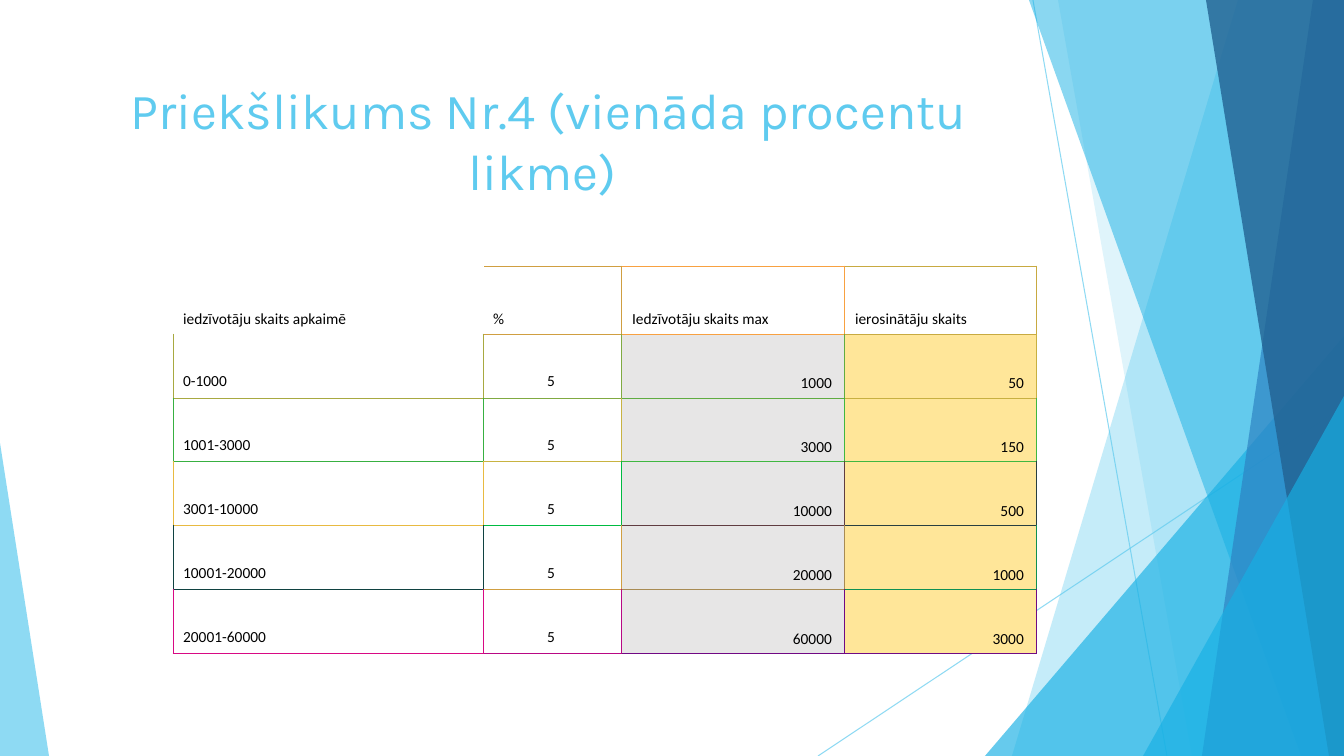
from lxml import etree
from pptx import Presentation
from pptx.dml.color import RGBColor
from pptx.enum.shapes import MSO_CONNECTOR, MSO_SHAPE
from pptx.enum.text import MSO_ANCHOR, PP_ALIGN
from pptx.oxml.ns import qn
from pptx.util import Emu, Pt

STRAIGHT = MSO_CONNECTOR.STRAIGHT
TRIANGLE = MSO_SHAPE.ISOSCELES_TRIANGLE
LEFT, MID, RIGHT = PP_ALIGN.LEFT, PP_ALIGN.CENTER, PP_ALIGN.RIGHT
CENTRE, BOTTOM = MSO_ANCHOR.MIDDLE, MSO_ANCHOR.BOTTOM

# Content
TITLE = "Priekšlikums Nr.4 (vienāda procentu likme) "
HEAD = ["iedzīvotāju skaits apkaimē", "%", "Iedzīvotāju skaits max", "ierosinātāju skaits"]
ROWS = [
    HEAD,
    ["0-1000", "5", "1000", "50"],
    ["1001-3000", "5", "3000", "150"],
    ["3001-10000", "5", "10000", "500"],
    ["10001-20000", "5", "20000", "1000"],
    ["20001-60000", "5", "60000", "3000"],
]
COLORS = {"sky": "5FCBEF", "cyan": "17B0E4", "blue": "2E83C3", "navy": "226292",
          "grey": "E7E6E6", "gold": "FFE699", "black": "000000"}
# Right and bottom edge of each cell
EDGES = [
    ["FFFFFF", "D09F41", "F8A141", "C8AA41"],
    ["A8A941", "80AA41", "60AC41", "C8B041"],
    ["38B041", "C8B341", "40B741", "40B741"],
    ["E8BA41", "00BB41", "603D41", "283F41"],
    ["104241", "D09F41", "A88B53", "109053"],
    ["D80984", "B80884", "700884", "700B84"],
]
# Column: width, alignment, anchor, fill
COLS = [(310, LEFT, CENTRE, None), (139, MID, CENTRE, None),
        (223, RIGHT, BOTTOM, "grey"), (192, RIGHT, BOTTOM, "gold")]
WIDE, HIGH = 1344, 756
TOP_ROW, ROW = 68, 64

# Background: lines by ends, bands by top and bottom x, wedges by box and tip
LINES = [(1033, 0, 1167, HIGH), (WIDE, 406, 818, HIGH)]
FACETS = [
    ("band", (1238, 1012), "sky", 36),
    ("band", (1058, 1192), "sky", 20),
    ("wedge", (985, 336, 359, 420, 1), "cyan", 66),
    ("band", (1029, 1301), "cyan", 50),
    ("band", (1313, 1202), "blue", 70),
    ("band", (1206, 1329), "navy", 80),
    ("wedge", (1143, 396, 201, 360, 1), "cyan", 66),
    ("wedge", (0, 443, 49, 313, 0), "sky", 70),
]

SCALE = 12192000 / WIDE


def px(n):
    return Emu(round(n * SCALE))


def rgb(name):
    return RGBColor.from_string(COLORS[name])


def fade(part, alpha):
    for tone in part.iter(qn("a:srgbClr")):
        etree.SubElement(tone, qn("a:alpha")).set("val", str(alpha * 1000))


def write(frame, text, font, size, color, align=LEFT):
    frame.word_wrap = True
    para = frame.paragraphs[0]
    para.alignment = align
    run = para.add_run()
    run.text = text
    run.font.name, run.font.size = font, Pt(size)
    run.font.color.rgb = rgb(color)


def edge(cell, sides):
    props = cell._tc.get_or_add_tcPr()
    for spot, (side, color) in enumerate(sides.items()):
        line = etree.Element(qn("a:ln" + side), w=str(Pt(0.75)))
        fill = etree.SubElement(line, qn("a:solidFill"))
        etree.SubElement(fill, qn("a:srgbClr"), val=color)
        props.insert(spot, line)


deck = Presentation()
deck.slide_width, deck.slide_height = px(WIDE), px(HIGH)
slide = deck.slides.add_slide(deck.slide_layouts[6])
shapes = slide.shapes

# Thin lines
for ends in LINES:
    line = shapes.add_connector(STRAIGHT, *map(px, ends))
    line.line.color.rgb = rgb("sky")
    line.line.width = Pt(0.75)
    props = line._element.spPr
    fade(props, 70)
    etree.SubElement(props, qn("a:effectLst"))

# Facets
for kind, place, color, alpha in FACETS:
    if kind == "band":
        top, foot = place
        pen = shapes.build_freeform(top, 0, scale=SCALE)
        pen.add_line_segments([(WIDE, 0), (WIDE, HIGH), (foot, HIGH)], close=True)
        facet = pen.convert_to_shape()
    else:
        *box, tip = place
        facet = shapes.add_shape(TRIANGLE, *map(px, box))
        facet.adjustments[0] = tip
    facet.shadow.inherit = False
    facet.fill.solid()
    facet.fill.fore_color.rgb = rgb(color)
    facet.line.fill.background()
    fade(facet._element.spPr, alpha)

# Title
title = shapes.add_textbox(px(75), px(67), px(947), px(146)).text_frame
title.vertical_anchor = CENTRE
write(title, TITLE, "Karla", 36, "sky", MID)

# Table
width = sum(col[0] for col in COLS)
height = TOP_ROW + ROW * (len(ROWS) - 1)
table = shapes.add_table(len(ROWS), len(COLS), px(173), px(266), px(width), px(height)).table
table.first_row = table.horz_banding = False
for c, col in enumerate(COLS):
    table.columns[c].width = px(col[0])
for r, row in enumerate(ROWS):
    table.rows[r].height = px(ROW if r else TOP_ROW)
    for c, (text, (_, align, anchor, fill)) in enumerate(zip(row, COLS)):
        cell = table.cell(r, c)
        cell.vertical_anchor = anchor if r else BOTTOM
        cell.margin_right = px(13)
        if r and anchor == CENTRE:
            cell.margin_top = px(35)
        if r and fill:
            cell.fill.solid()
            cell.fill.fore_color.rgb = rgb(fill)
        else:
            cell.fill.background()
        own = EDGES[r][c]
        edge(cell, {"L": EDGES[r][c - 1] if c else own, "R": own,
                    "T": EDGES[r - 1][c] if r else own, "B": own})
        write(cell.text_frame, text, "Calibri", 11, "black", align if r else LEFT)

deck.save("out.pptx")
